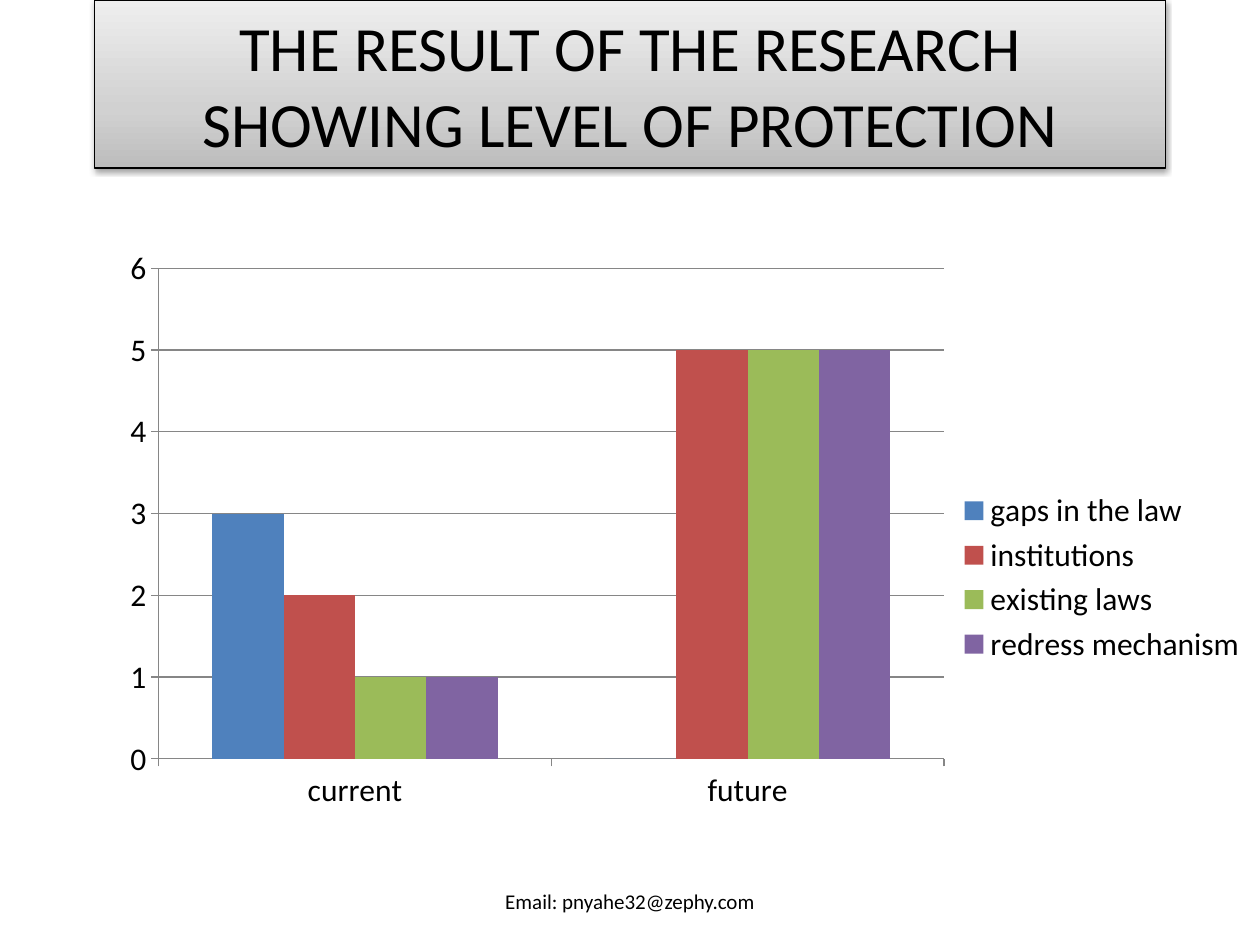
"""Build a slide with a title banner, a clustered column chart and a contact line."""

from copy import deepcopy
from dataclasses import dataclass

from lxml.etree import SubElement
from pptx import Presentation
from pptx.chart.data import CategoryChartData
from pptx.dml.color import RGBColor
from pptx.enum.chart import XL_CHART_TYPE, XL_LEGEND_POSITION, XL_TICK_MARK
from pptx.enum.shapes import MSO_SHAPE
from pptx.enum.text import MSO_ANCHOR, PP_ALIGN
from pptx.oxml.ns import qn
from pptx.util import Pt


@dataclass(frozen=True)
class Theme:
    font: str = "Calibri"
    ink: str = "000000"
    grid: str = "868686"
    banner: tuple = ((0, "BDBDBD"), (0.35, "D1D1D1"), (1, "EEEEEE"))
    title_size: int = 36
    chart_size: int = 18
    contact_size: int = 12


@dataclass(frozen=True)
class Frame:
    left: float
    top: float
    width: float
    height: float

    def lengths(self) -> tuple:
        return Pt(self.left), Pt(self.top), Pt(self.width), Pt(self.height)


@dataclass(frozen=True)
class Measure:
    name: str
    values: tuple
    color: str


THEME = Theme()
CATEGORIES = ("current", "future")
MEASURES = (
    Measure("gaps in the law", (3, 0), "4F81BD"),
    Measure("institutions", (2, 5), "C0504D"),
    Measure("existing laws", (1, 5), "9BBB59"),
    Measure("redress mechanism", (1, 5), "8064A2"),
)
PLOT_AREA = {"x": 0.08, "y": 0.04, "w": 0.656, "h": 0.73}


def style_font(font, size: int) -> None:
    font.name = THEME.font
    font.size = Pt(size)
    font.color.rgb = RGBColor.from_string(THEME.ink)


def write_text(shape, text: str, size: int) -> None:
    text_frame = shape.text_frame
    text_frame.word_wrap = True
    text_frame.vertical_anchor = MSO_ANCHOR.MIDDLE
    text_frame.text = text
    paragraph = text_frame.paragraphs[0]
    paragraph.alignment = PP_ALIGN.CENTER
    for span in paragraph.runs:
        style_font(span.font, size)


def fill_gradient(shape, stops: tuple, angle: float) -> None:
    shape.fill.gradient()
    shape.fill.gradient_angle = angle
    stop_list = shape.element.spPr.find(".//" + qn("a:gsLst"))
    stop_list.append(deepcopy(stop_list[0]))
    for stop, (position, color) in zip(shape.fill.gradient_stops, stops):
        stop.position = position
        stop.color.rgb = RGBColor.from_string(color)


def add_drop_shadow(shape) -> None:
    shape.shadow.inherit = False
    effects = shape.element.spPr.find(qn("a:effectLst"))
    shadow = SubElement(effects, qn("a:outerShdw"), blurRad=str(Pt(3.15)),
                        dist=str(Pt(1.57)), dir="5400000", rotWithShape="0")
    color = SubElement(shadow, qn("a:srgbClr"), val=THEME.ink)
    SubElement(color, qn("a:alpha"), val="38000")


def add_banner(page, frame: Frame, text: str) -> None:
    banner = page.shapes.add_shape(MSO_SHAPE.RECTANGLE, *frame.lengths())
    fill_gradient(banner, THEME.banner, 90)
    banner.line.color.rgb = RGBColor.from_string(THEME.ink)
    banner.line.width = Pt(0.75)
    add_drop_shadow(banner)
    write_text(banner, text, THEME.title_size)


def add_contact(page, frame: Frame, text: str) -> None:
    box = page.shapes.add_textbox(*frame.lengths())
    write_text(box, text, THEME.contact_size)


def place_plot_area(chart) -> None:
    plot_area = chart.element.find(".//" + qn("c:plotArea"))
    layout = plot_area.find(qn("c:layout"))
    if layout is None:
        layout = plot_area.makeelement(qn("c:layout"))
        plot_area.insert(0, layout)
    manual = SubElement(layout, qn("c:manualLayout"))
    settings = {"layoutTarget": "inner", "xMode": "edge", "yMode": "edge", **PLOT_AREA}
    for name, value in settings.items():
        SubElement(manual, qn(f"c:{name}"), val=str(value))


def style_line(line) -> None:
    line.color.rgb = RGBColor.from_string(THEME.grid)
    line.width = Pt(0.75)


def add_column_chart(page, frame: Frame) -> None:
    data = CategoryChartData()
    data.categories = CATEGORIES
    for measure in MEASURES:
        data.add_series(measure.name, measure.values)
    chart = page.shapes.add_chart(
        XL_CHART_TYPE.COLUMN_CLUSTERED, *frame.lengths(), data).chart
    style_font(chart.font, THEME.chart_size)
    chart.has_title = False
    chart.has_legend = True
    chart.legend.position = XL_LEGEND_POSITION.RIGHT
    chart.legend.include_in_layout = False

    plot = chart.plots[0]
    plot.gap_width = 150
    plot.overlap = 0
    plot.vary_by_categories = False
    for series, measure in zip(plot.series, MEASURES):
        series.format.fill.solid()
        series.format.fill.fore_color.rgb = RGBColor.from_string(measure.color)

    for axis in (chart.category_axis, chart.value_axis):
        axis.major_tick_mark = XL_TICK_MARK.OUTSIDE
        axis.minor_tick_mark = XL_TICK_MARK.NONE
        style_line(axis.format.line)
    value_axis = chart.value_axis
    value_axis.minimum_scale, value_axis.maximum_scale = 0, 6
    value_axis.major_unit = 1
    value_axis.has_major_gridlines = True
    style_line(value_axis.major_gridlines.format.line)
    place_plot_area(chart)


def main() -> None:
    deck = Presentation()
    deck.slide_width, deck.slide_height = Pt(720), Pt(540)
    page = deck.slides.add_slide(deck.slide_layouts[6])
    add_banner(page, Frame(54, 0, 612, 96),
               "THE RESULT OF THE RESEARCH\vSHOWING LEVEL OF PROTECTION")
    add_contact(page, Frame(246, 500.5, 228, 28.75), "Email: pnyahe32@zephy.com")
    add_column_chart(page, Frame(36, 138, 684, 384))
    deck.save("out.pptx")


if __name__ == "__main__":
    main()
